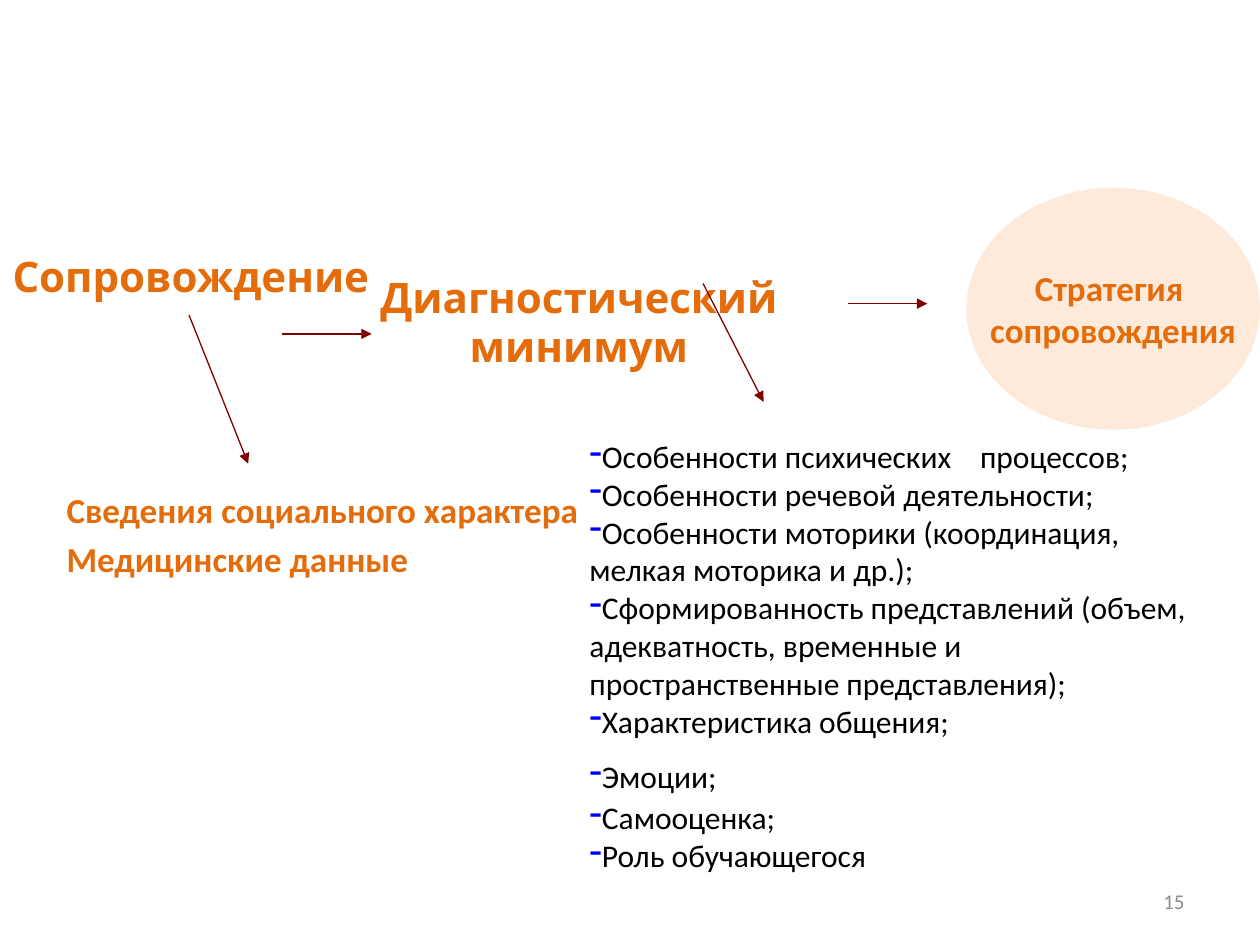
import pptx
import pptx.util
import pptx.dml.color
import pptx.enum.shapes
import pptx.enum.text
import pptx.oxml
import pptx.oxml.ns
from dataclasses import dataclass

Inches = pptx.util.Inches
Pt = pptx.util.Pt
ALIGN = pptx.enum.text.PP_ALIGN
ANCHOR = pptx.enum.text.MSO_ANCHOR
qn = pptx.oxml.ns.qn


@dataclass(frozen=True)
class Theme:
    body_font: str = "Calibri"
    heading_font: str = "Karla"
    orange: str = "E46C0A"
    peach: str = "FDEADA"
    maroon: str = "800000"
    blue: str = "0000FF"
    black: str = "000000"
    grey: str = "8C8C8C"
    heading_size: int = 24
    accent_size: int = 20
    list_size: int = 18
    number_size: int = 12
    no_table_style: str = "{2D5ABB26-0587-4C30-8999-92F81FD0307C}"


THEME = Theme()
HEADING = dict(name=THEME.heading_font, size=Pt(THEME.heading_size), bold=True)
ACCENT = dict(name=THEME.body_font, size=Pt(THEME.accent_size), bold=True)
LISTED = dict(name=THEME.body_font, size=Pt(THEME.list_size))
NUMBER = dict(name=THEME.body_font, size=Pt(THEME.number_size))

FEATURES = [
    "Особенности психических\tпроцессов;",
    "Особенности речевой деятельности;",
    "Особенности моторики (координация, мелкая моторика и др.);",
    "Сформированность представлений (объем, адекватность, временные и "
    "пространственные представления);",
    "Характеристика общения;",
    "Эмоции;",
    "Самооценка;",
    "Роль обучающегося",
]

ARROWS = [
    ((6.73, 2.41), (7.36, 2.41)),
    ((2.24, 2.65), (2.95, 2.65)),
    ((1.5, 2.5), (1.97, 3.68)),
    ((5.58, 2.25), (6.06, 3.19)),
]


def rgb(value):
    return pptx.dml.color.RGBColor.from_string(value)


def apply(target, formats):
    for name, value in formats.items():
        setattr(target, name, value)


def add_xml(parent, tag, **attributes):
    child = pptx.oxml.parse_xml(f'<{tag} {pptx.oxml.ns.nsdecls("a")}/>')
    for name, value in attributes.items():
        child.set(name, value)
    parent.append(child)
    return child


def add_dash(paragraph):
    properties = paragraph._p.get_or_add_pPr()
    bullet_color = add_xml(properties, "a:buClr")
    add_xml(bullet_color, "a:srgbClr", val=THEME.blue)
    add_xml(properties, "a:buSzPct", val="120000")
    add_xml(properties, "a:buChar", char="-")


def add_tab_stop(paragraph, position):
    stops = add_xml(paragraph._p.get_or_add_pPr(), "a:tabLst")
    add_xml(stops, "a:tab", pos=str(position), algn="l")


def write(frame, lines, font, color, align=ALIGN.LEFT, gap=0, dashed=False):
    frame.text = "\n".join(lines)
    for index, paragraph in enumerate(frame.paragraphs):
        paragraph.alignment = align
        if index and gap:
            paragraph.space_before = Pt(gap)
        if dashed:
            add_dash(paragraph)
        if "\t" in lines[index]:
            add_tab_stop(paragraph, Inches(3.1))
        for run in paragraph.runs:
            apply(run.font, font)
            run.font.color.rgb = rgb(color)


def add_text(slide, box, lines, font, color, anchor=ANCHOR.TOP, **layout):
    frame = slide.shapes.add_textbox(*map(Inches, box)).text_frame
    apply(frame, dict(word_wrap=True, vertical_anchor=anchor))
    write(frame, lines, font, color, **layout)
    return frame


def add_heading_table(slide, box, heading, top_margin, align):
    table = slide.shapes.add_table(1, 1, *map(Inches, box)).table
    apply(table, dict(first_row=False, horz_banding=False))
    table._tbl.tblPr.find(qn("a:tableStyleId")).text = THEME.no_table_style
    cell = table.cell(0, 0)
    cell.fill.background()
    cell.margin_top = Inches(top_margin)
    write(cell.text_frame, [heading], HEADING, THEME.orange, align)


def add_strategy(slide):
    strategy = slide.shapes.add_shape(
        pptx.enum.shapes.MSO_SHAPE.OVAL, *map(Inches, (7.67, 1.49, 2.33, 1.92)))
    strategy.shadow.inherit = False
    strategy.fill.solid()
    strategy.fill.fore_color.rgb = rgb(THEME.peach)
    strategy.line.fill.background()
    apply(strategy.text_frame,
          dict(word_wrap=False, vertical_anchor=ANCHOR.MIDDLE))
    write(strategy.text_frame, ["Стратегия ", "сопровождения"],
          ACCENT, THEME.orange, ALIGN.CENTER)


def add_arrow(slide, start, end):
    arrow = slide.shapes.add_connector(
        pptx.enum.shapes.MSO_CONNECTOR.STRAIGHT, *map(Inches, start + end))
    arrow.line.color.rgb = rgb(THEME.maroon)
    arrow.line.width = Pt(0.75)
    add_xml(arrow.line._get_or_add_ln(), "a:tailEnd", type="triangle")
    add_xml(arrow._element.spPr, "a:effectLst")


def main():
    deck = pptx.Presentation()
    apply(deck, dict(slide_width=Inches(10), slide_height=Inches(7.5)))
    slide = deck.slides.add_slide(deck.slide_layouts[6])

    add_text(slide, (7.17, 6.95, 2.33, 0.4), ["15"], NUMBER, THEME.grey,
             anchor=ANCHOR.MIDDLE, align=ALIGN.RIGHT)
    add_text(slide, (0.43, 3.83, 4.42, 2.95),
             ["Сведения социального характера", "Медицинские данные"],
             ACCENT, THEME.orange, gap=4)
    features = add_text(slide, (4.58, 3.42, 5.17, 3.57), FEATURES,
                        LISTED, THEME.black, dashed=True)
    emotions = features.paragraphs[FEATURES.index("Эмоции;")]
    apply(emotions, dict(space_before=Pt(10), space_after=Pt(2)))

    add_heading_table(slide, (0, 0.92, 3.07, 1.61), "Сопровождение",
                      1.1, ALIGN.LEFT)
    add_heading_table(slide, (2.72, 1.15, 3.75, 2.83),
                      "Диагностический минимум", 1.03, ALIGN.CENTER)
    add_strategy(slide)
    for start, end in ARROWS:
        add_arrow(slide, start, end)

    deck.save("out.pptx")


if __name__ == "__main__":
    main()
